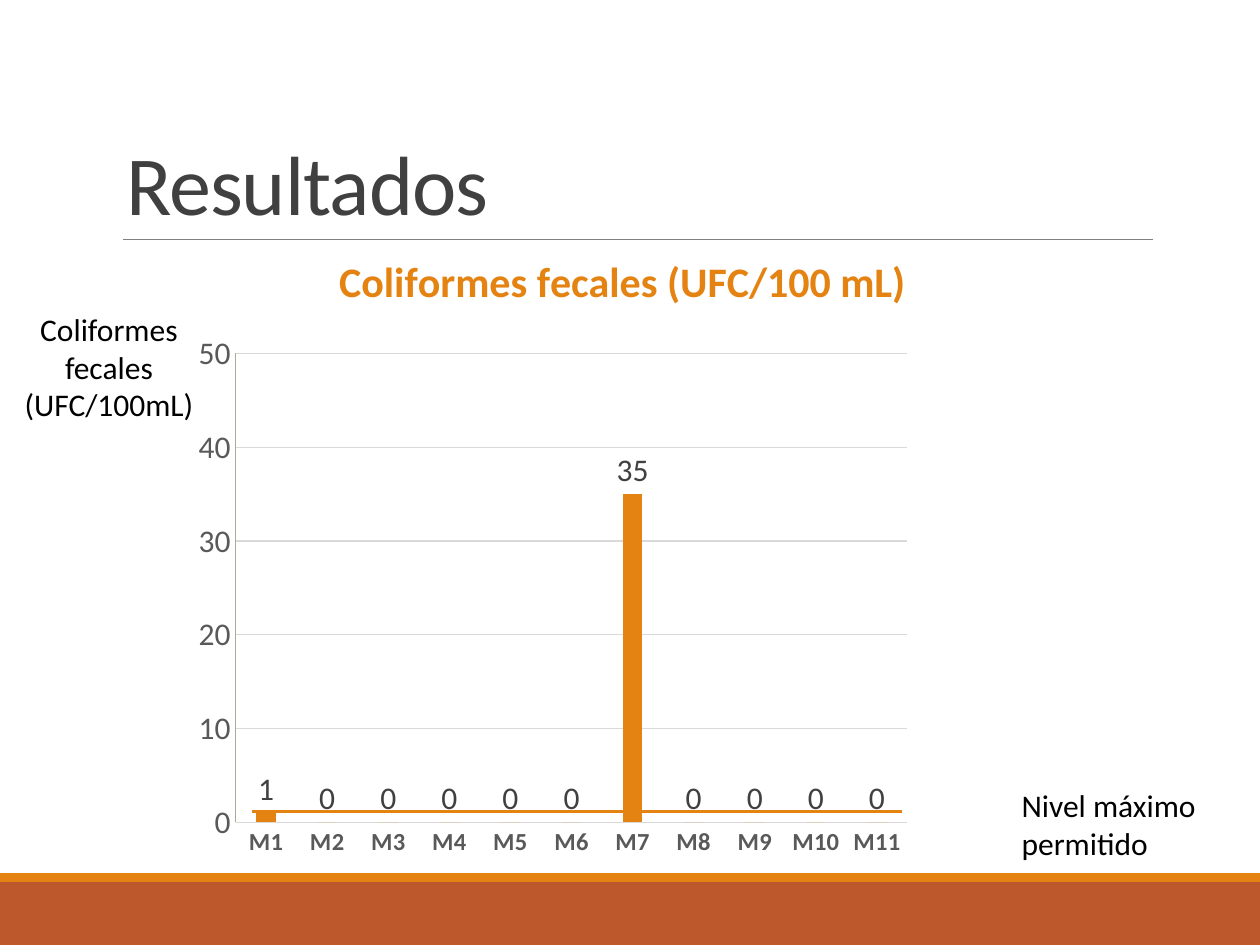
from lxml import etree
from pptx import Presentation
from pptx.chart.data import CategoryChartData
from pptx.dml.color import RGBColor
from pptx.enum.chart import XL_CHART_TYPE, XL_LABEL_POSITION, XL_TICK_MARK
from pptx.enum.shapes import MSO_CONNECTOR, MSO_SHAPE
from pptx.enum.text import MSO_ANCHOR, PP_ALIGN
from pptx.oxml.ns import qn
from pptx.util import Inches, Pt

COLUMN = XL_CHART_TYPE.COLUMN_CLUSTERED
OUTSIDE = XL_LABEL_POSITION.OUTSIDE_END
NO_TICK = XL_TICK_MARK.NONE
LEFT, CENTER = PP_ALIGN.LEFT, PP_ALIGN.CENTER

# Content
FONT = "Calibri"
TITLE = "Resultados"
CHART_TITLE = "Coliformes fecales (UFC/100 mL)"
VALUES = [1, 0, 0, 0, 0, 0, 35, 0, 0, 0, 0]
SAMPLES = [f"M{i}" for i in range(1, len(VALUES) + 1)]
COLORS = {"orange": "E48312", "rust": "BD582C", "title": "404040",
          "rule": "808080", "axis_text": "595959", "grid": "D9D9D9",
          "value_axis": "A2AF92", "black": "000000"}

# Geometry: left, top, width, height in inches
W, H = 10, 7.5
BANDS = [(0, 7, W, 0.5, "rust"), (0, 6.93, W, 0.07, "orange")]
NOTES = [("Nivel máximo permitido", (8.01, 6.19, 1.76, 0.71), LEFT),
         ("Coliformes fecales (UFC/100mL)", (0.06, 2.41, 1.61, 1.01), CENTER)]
# Horizontal lines: x from, x to, y, colour, points
TITLE_RULE = (0.98, 9.15, 1.9, "rule", 0.5)
LIMIT_LINE = (2, 7.16, 6.44, "orange", 1.75)
CHART_BOX = (1.46, 1.9, 5.86, 5.03)
# Shares of the chart's size
PLOT_LAYOUT = {"x": 0.07, "y": 0.18, "w": 0.91, "h": 0.74}
TITLE_LAYOUT = {"x": 0.2, "y": 0.01}


def rgb(name):
    return RGBColor.from_string(COLORS[name])


def inches(box):
    return [Inches(v) for v in box]


def style(font, size, color, bold=False):
    font.name, font.size, font.bold = FONT, Pt(size), bold
    font.color.rgb = rgb(color)


def stroke(line, color, width):
    line.color.rgb = rgb(color)
    line.width = Pt(width)


def add_rule(s, x1, x2, y, color, width):
    c = s.shapes.add_connector(MSO_CONNECTOR.STRAIGHT, *inches((x1, y, x2, y)))
    stroke(c.line, color, width)
    etree.SubElement(c._element.spPr, qn("a:effectLst"))


def set_layout(parent, index, shares, inner=False):
    for old in parent.findall(qn("c:layout")):
        parent.remove(old)
    layout = etree.Element(qn("c:layout"))
    manual = etree.SubElement(layout, qn("c:manualLayout"))
    items = [("layoutTarget", "inner")] if inner else []
    items += [("xMode", "edge"), ("yMode", "edge"), *shares.items()]
    for tag, value in items:
        etree.SubElement(manual, qn(f"c:{tag}")).set("val", str(value))
    parent.insert(index, layout)


def add_results_chart(s):
    data = CategoryChartData()
    data.categories = SAMPLES
    data.add_series("Series 1", VALUES)
    chart = s.shapes.add_chart(COLUMN, *inches(CHART_BOX), data).chart
    style(chart.font, 10, "black")
    chart.has_legend = False

    # Title and plot area
    chart.has_title = True
    tf = chart.chart_title.text_frame
    tf.text = CHART_TITLE
    style(tf.paragraphs[0].runs[0].font, 24, "orange", True)
    set_layout(chart.chart_title._element, 1, TITLE_LAYOUT)
    set_layout(chart._chartSpace.chart.plotArea, 0, PLOT_LAYOUT, inner=True)

    # Axes
    cat, val = chart.category_axis, chart.value_axis
    for axis, size, bold, color in ((cat, 14, True, "grid"),
                                    (val, 18, False, "value_axis")):
        axis.major_tick_mark = axis.minor_tick_mark = NO_TICK
        style(axis.tick_labels.font, size, "axis_text", bold)
        stroke(axis.format.line, color, 0.75)
    val.minimum_scale, val.maximum_scale, val.major_unit = 0, 50, 10
    val.has_major_gridlines = True
    stroke(val.major_gridlines.format.line, "grid", 0.75)

    # Columns and their values
    plot = chart.plots[0]
    plot.gap_width, plot.overlap, plot.vary_by_categories = 215, -32, False
    series = plot.series[0]
    series.format.fill.solid()
    series.format.fill.fore_color.rgb = rgb("orange")
    labels = series.data_labels
    labels.show_value, labels.position = True, OUTSIDE
    style(labels.font, 18, "title")


def main():
    prs = Presentation()
    prs.slide_width, prs.slide_height = inches((W, H))
    s = prs.slides.add_slide(prs.slide_layouts[5])

    # Footer bands and rule under the title
    for *box, color in BANDS:
        sp = s.shapes.add_shape(MSO_SHAPE.RECTANGLE, *inches(box))
        sp.shadow.inherit = False
        sp.fill.solid()
        sp.fill.fore_color.rgb = rgb(color)
        sp.line.fill.background()
    add_rule(s, *TITLE_RULE)

    # Title
    title = s.shapes.title
    title.left, title.top, title.width, title.height = inches((0.9, 0.31, 8.25, 1.59))
    tf = title.text_frame
    tf.text = TITLE
    tf.vertical_anchor = MSO_ANCHOR.BOTTOM
    p = tf.paragraphs[0]
    p.alignment, p.line_spacing = LEFT, 0.85
    r = p.runs[0]
    style(r.font, 48, "title")
    r._r.get_or_add_rPr().set("spc", "-50")

    # Notes beside the chart
    for text, box, align in NOTES:
        tf = s.shapes.add_textbox(*inches(box)).text_frame
        tf.word_wrap = True
        tf.text = text
        p = tf.paragraphs[0]
        p.alignment = align
        style(p.runs[0].font, 18, "black")

    # Chart with the permitted limit drawn over it
    add_results_chart(s)
    add_rule(s, *LIMIT_LINE)
    prs.save("out.pptx")


if __name__ == "__main__":
    main()
